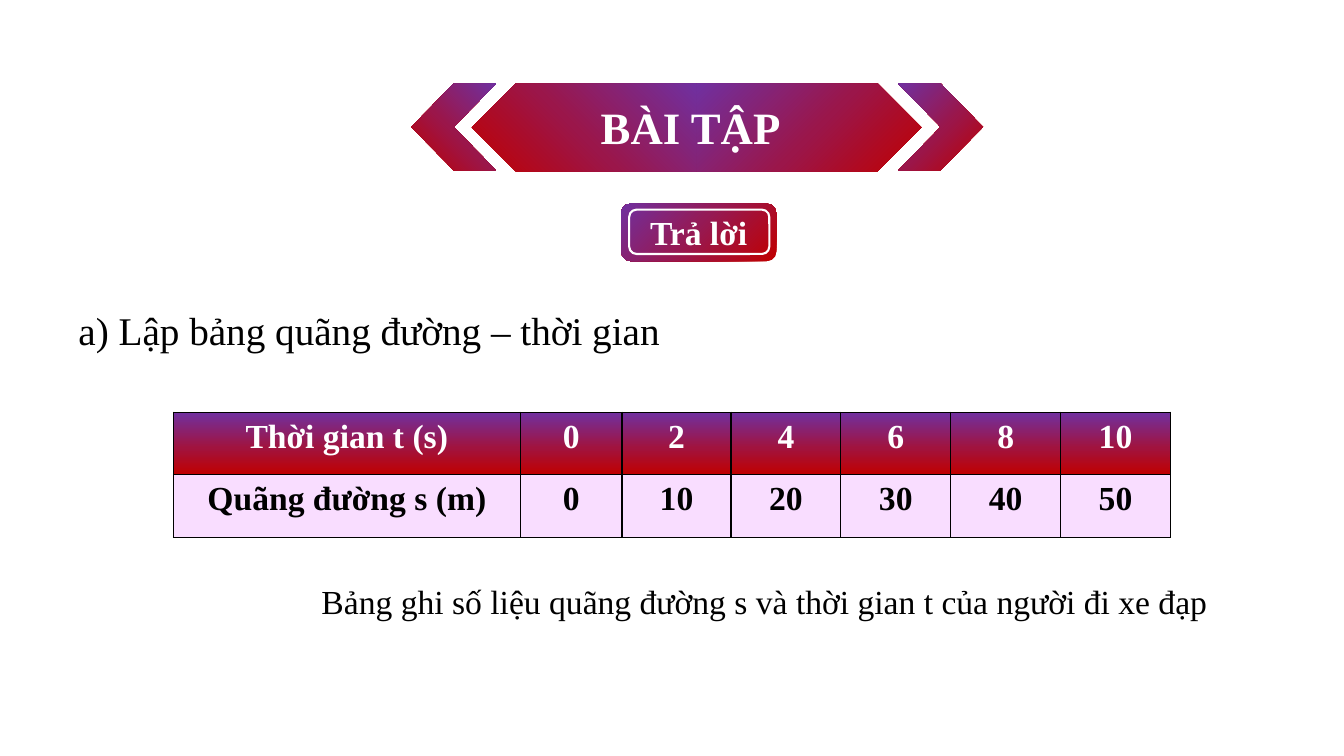
from copy import deepcopy

from lxml.etree import SubElement
from pptx import Presentation
from pptx.dml.color import RGBColor
from pptx.enum.shapes import MSO_SHAPE
from pptx.enum.text import MSO_ANCHOR, MSO_AUTO_SIZE, PP_ALIGN
from pptx.oxml.ns import qn
from pptx.util import Inches, Pt

RED, PURPLE, PINK, WHITE, BLACK = "C00000", "7030A0", "F9DDFF", "FFFFFF", "000000"
BADGE_STOPS = [(0, RED), (0.54, "951A56"), (1, PURPLE)]
BANNER_STOPS = [(0, RED), (0.47, "9B164A"), (1, PURPLE)]
HEADER_STOPS = [(0, PURPLE), (0.57, "A1133E"), (1, RED)]
TO_TOP_LEFT, DOWNWARD = 135, 270  # counter-clockwise degrees


def color(value):
    return RGBColor.from_string(value)


class SlideBuilder:
    def __init__(self, slide, font_name):
        self.slide = slide
        self.font_name = font_name

    def set_text(self, text_frame, text, size, ink, bold=False, align=None):
        paragraph = text_frame.paragraphs[0]
        paragraph.text = text
        paragraph.alignment = align
        font = paragraph.font
        font.name, font.size, font.bold = self.font_name, Pt(size), bold
        font.color.rgb = color(ink)

    def gradient(self, fill, element, stops, angle):
        """Fill a shape or cell, whose XML is element, with any number of stops."""
        fill.gradient()
        fill.gradient_angle = angle
        stop_list = element.find(".//" + qn("a:gsLst"))
        while len(stop_list) < len(stops):
            stop_list.append(deepcopy(stop_list[0]))
        for stop, (position, value) in zip(fill.gradient_stops, stops):
            stop.position = position
            stop.color.rgb = color(value)

    def shape(self, kind, box, stops=None, outline=None, flipped=False):
        shape = self.slide.shapes.add_shape(kind, *map(Inches, box))
        shape.shadow.inherit = False
        if stops:
            self.gradient(shape.fill, shape._element, stops, TO_TOP_LEFT)
        else:
            shape.fill.background()
        if outline:
            shape.line.color.rgb = color(outline)
            shape.line.width = Pt(1.5)
        else:
            shape.line.fill.background()
        if flipped:
            shape._element.spPr.find(qn("a:xfrm")).set("flipH", "1")
        return shape

    def text(self, box, text, size, ink=BLACK, bold=False):
        text_frame = self.slide.shapes.add_textbox(*map(Inches, box)).text_frame
        text_frame.word_wrap = True
        text_frame.auto_size = MSO_AUTO_SIZE.SHAPE_TO_FIT_TEXT
        self.set_text(text_frame, text, size, ink, bold)

    def borders(self, cell):
        properties = cell._tc.get_or_add_tcPr()
        for index, side in enumerate(("lnL", "lnR", "lnT", "lnB")):
            line = SubElement(properties, qn("a:" + side), w=str(Pt(1)))
            fill = SubElement(line, qn("a:solidFill"))
            SubElement(fill, qn("a:srgbClr"), val=BLACK)
            properties.insert(index, line)

    def table(self, left, top, column_widths, row_height, rows):
        frame = self.slide.shapes.add_table(
            len(rows), len(column_widths), Inches(left), Inches(top),
            Inches(sum(column_widths)), Inches(row_height * len(rows)))
        table = frame.table
        for column, width in zip(table.columns, column_widths):
            column.width = Inches(width)
        for row_index, values in enumerate(rows):
            table.rows[row_index].height = Inches(row_height)
            is_header = row_index == 0
            for column_index, value in enumerate(values):
                cell = table.cell(row_index, column_index)
                cell.margin_left = cell.margin_right = Inches(0.11)
                cell.margin_top = cell.margin_bottom = Inches(0.06)
                if is_header:
                    self.gradient(cell.fill, cell._tc, HEADER_STOPS, DOWNWARD)
                else:
                    cell.fill.solid()
                    cell.fill.fore_color.rgb = color(PINK)
                self.borders(cell)
                self.set_text(cell.text_frame, value, 24, WHITE if is_header else BLACK,
                              True, PP_ALIGN.CENTER)


def main():
    presentation = Presentation()
    presentation.slide_width = Inches(13.33)
    presentation.slide_height = Inches(7.5)
    slide = presentation.slides.add_slide(presentation.slide_layouts[6])
    builder = SlideBuilder(slide, "Times New Roman")

    badge = builder.shape(MSO_SHAPE.ROUNDED_RECTANGLE, (6.16, 2.02, 1.54, 0.57), BADGE_STOPS)
    badge.text_frame.vertical_anchor = MSO_ANCHOR.MIDDLE
    builder.set_text(badge.text_frame, "Trả lời", 24, WHITE, True, PP_ALIGN.CENTER)
    builder.shape(MSO_SHAPE.ROUNDED_RECTANGLE, (6.24, 2.08, 1.39, 0.44), outline=WHITE)

    times = range(0, 11, 2)
    speed = 5
    builder.table(1.72, 4.09, [3.44, 1.01, 1.08] + [1.09] * 4, 0.62, [
        ["Thời gian t (s)"] + [str(time) for time in times],
        ["Quãng đường s (m)"] + [str(speed * time) for time in times],
    ])
    builder.text((3.09, 5.71, 9.08, 0.5),
                 "Bảng ghi số liệu quãng đường s và thời gian t của người đi xe đạp", 24)
    builder.text((0.68, 2.99, 7.68, 0.57), "a) Lập bảng quãng đường – thời gian", 28)

    for chevron_left, plate_left, flipped in ((8.91, 6.91, False), (4.08, 4.68, True)):
        builder.shape(MSO_SHAPE.CHEVRON, (chevron_left, 0.83, 0.84, 0.86),
                      BANNER_STOPS, flipped=flipped)
        builder.shape(MSO_SHAPE.PENTAGON, (plate_left, 0.83, 2.23, 0.87),
                      BANNER_STOPS, flipped=flipped)
    builder.text((5.86, 0.94, 2.11, 0.64), "BÀI TẬP", 32, WHITE, True)

    presentation.save("out.pptx")


if __name__ == "__main__":
    main()
